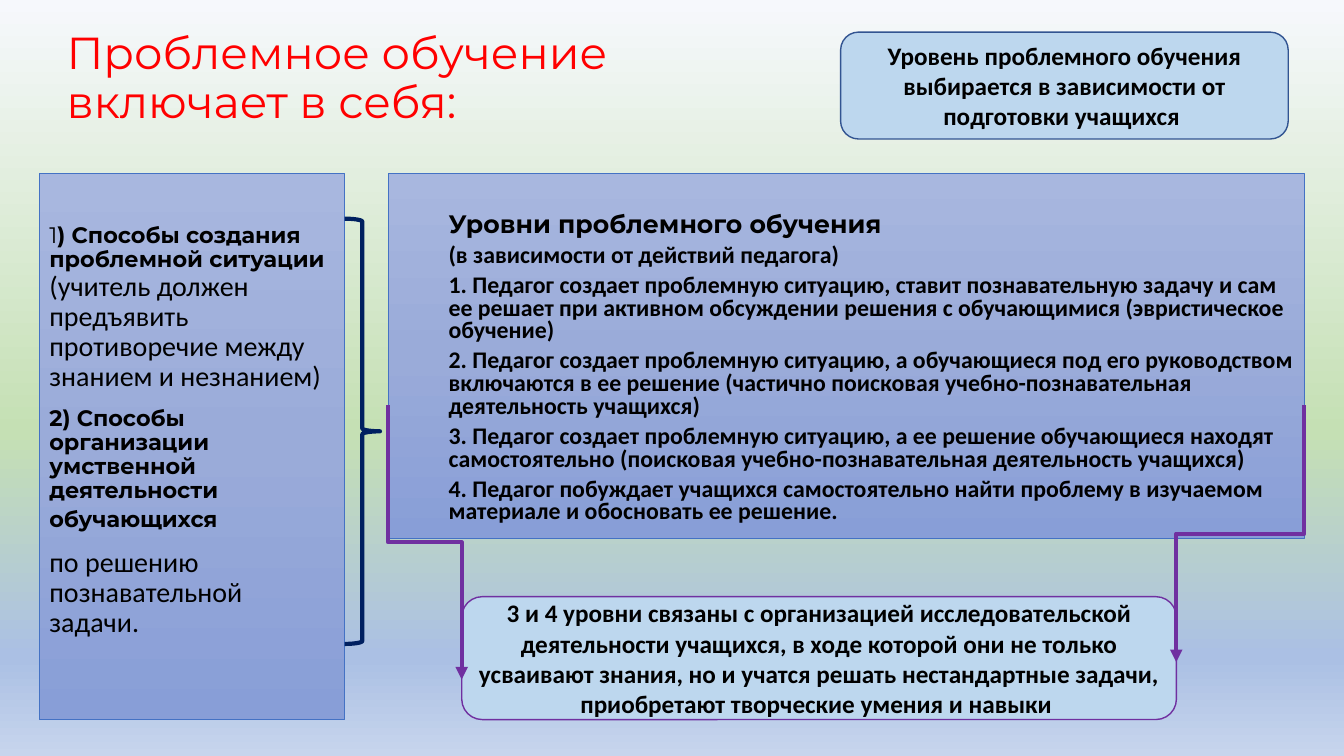
from lxml import etree
from pptx import Presentation
from pptx.dml.color import RGBColor
from pptx.enum import shapes, text
from pptx.oxml.ns import qn
from pptx.util import Pt

RED = RGBColor(0xFF, 0x00, 0x00)
BLACK = RGBColor(0x00, 0x00, 0x00)
BLUE = RGBColor(0x44, 0x72, 0xC4)
STEEL = RGBColor(0x32, 0x54, 0x91)
NAVY = RGBColor(0x00, 0x20, 0x60)
PURPLE = RGBColor(0x70, 0x30, 0xA0)
PALE = RGBColor(0xBD, 0xD7, 0xEE)
PANEL_STOPS = [(0, RGBColor(0xA8, 0xB7, 0xDF)), (50, RGBColor(0x9A, 0xAB, 0xD9)),
               (100, RGBColor(0x88, 0x9E, 0xD7))]
PAGE_STOPS = [(0, RGBColor(0xF6, 0xF8, 0xFC)), (57, RGBColor(0xC5, 0xE0, 0xB4)),
              (87, RGBColor(0xAB, 0xC0, 0xE4)), (100, RGBColor(0xC7, 0xD5, 0xED))]


def shade(fill, element, stops):
    fill.gradient()
    fill.gradient_angle = 270
    stop_list = element.find(".//" + qn("a:gsLst"))
    for stop in list(stop_list):
        stop_list.remove(stop)
    for position, color in stops:
        stop = etree.SubElement(stop_list, qn("a:gs"), pos=str(position * 1000))
        etree.SubElement(stop, qn("a:srgbClr"), val=str(color))


def place(shape, left, top, width, height):
    shape.left, shape.top = Pt(left), Pt(top)
    shape.width, shape.height = Pt(width), Pt(height)


deck = Presentation()
deck.slide_width, deck.slide_height = Pt(960), Pt(540)
page = deck.slides.add_slide(deck.slide_layouts[3])
shade(page.background.fill, page.element, PAGE_STOPS)

title, methods, levels = list(page.placeholders)[:3]
place(title, 40.3, -14.4, 884.2, 107.3)
title.text_frame.text = "Проблемное обучение\vвключает в себя:"
title.text_frame.auto_size = text.MSO_AUTO_SIZE.NONE
title.text_frame.vertical_anchor = text.MSO_ANCHOR.MIDDLE
title.text_frame.margin_top = Pt(38.6)
heading = title.text_frame.paragraphs[0]
heading.alignment = text.PP_ALIGN.LEFT
heading.line_spacing = 0.9
heading.font.name, heading.font.size = "Montserrat", Pt(32)
heading.font.color.rgb = RED

# span: wording, font, size, bold
METHODS = [
    [("1", "Montserrat", 16, False),
     (") Способы создания проблемной ситуации ", "Montserrat", 16, True),
     ("(учитель должен предъявить противоречие между знанием и незнанием)", "Calibri", 20, False)],
    [("2) Способы организации умственной деятельности обучающихся", "Montserrat", 16, True),
     (" ", "Calibri", 20, False)],
    [("по решению познавательной задачи.", "Calibri", 20, False)],
]
LEVELS = [[("Уровни проблемного обучения", "Montserrat", 18, True)]] + [
    [(line, "Calibri", 17, True)] for line in (
        "(в зависимости от действий педагога)",
        "1. Педагог создает проблемную ситуацию, ставит познавательную задачу и сам ее решает "
        "при активном обсуждении решения с обучающимися (эвристическое обучение)",
        "2. Педагог создает проблемную ситуацию, а обучающиеся под его руководством включаются "
        "в ее решение (частично поисковая учебно-познавательная деятельность учащихся)",
        "3. Педагог создает проблемную ситуацию, а ее решение обучающиеся находят самостоятельно "
        "(поисковая учебно-познавательная деятельность учащихся)",
        "4. Педагог побуждает учащихся самостоятельно найти проблему в изучаемом материале "
        "и обосновать ее решение.",
    )
]
for panel, left, width, height, inset, indent, spacing, gap, paragraphs in (
    (methods, 28.1, 218.2, 390.2, 36, 0, 0.9, 10, METHODS),
    (levels, 277.2, 654.5, 260.6, 29, 36, 0.8, 5, LEVELS),
):
    place(panel, left, 123.8, width, height)
    shade(panel.fill, panel.element, PANEL_STOPS)
    panel.line.color.rgb, panel.line.width = BLUE, Pt(0.5)
    frame = panel.text_frame
    frame.auto_size = text.MSO_AUTO_SIZE.NONE
    frame.margin_top = Pt(inset)
    for number, spans in enumerate(paragraphs):
        para = frame.add_paragraph() if number else frame.paragraphs[0]
        para.line_spacing = spacing
        para.space_before = Pt(gap if number else 0)
        properties = para._p.get_or_add_pPr()
        properties.set("marL", str(Pt(indent)))
        properties.set("indent", "0")
        etree.SubElement(properties, qn("a:buNone"))
        for wording, font, size, bold in spans:
            span = para.add_run()
            span.text = wording
            span.font.name, span.font.size, span.font.bold = font, Pt(size), bold
            span.font.color.rgb = BLACK

brace = page.shapes.add_shape(shapes.MSO_SHAPE.RIGHT_BRACE, Pt(246.2), Pt(156.2), Pt(25.2), Pt(303.8))
brace.shadow.inherit = False
brace.fill.background()
brace.line.color.rgb, brace.line.width = NAVY, Pt(3)

for left, top, width, height, outline, wording in (
    (600.5, 23, 319.7, 76.3, STEEL,
     "Уровень проблемного обучения выбирается в зависимости от подготовки учащихся "),
    (329.8, 426.2, 510.5, 87.8, PURPLE,
     "3 и 4 уровни связаны с организацией исследовательской деятельности учащихся, в ходе которой "
     "они не только усваивают знания, но и учатся решать нестандартные задачи, "
     "приобретают творческие умения и навыки "),
):
    box = page.shapes.add_shape(shapes.MSO_SHAPE.ROUNDED_RECTANGLE, Pt(left), Pt(top), Pt(width), Pt(height))
    box.shadow.inherit = False
    box.fill.solid()
    box.fill.fore_color.rgb = PALE
    box.line.color.rgb, box.line.width = outline, Pt(1)
    box.text_frame.word_wrap = True
    box.text_frame.vertical_anchor = text.MSO_ANCHOR.MIDDLE
    para = box.text_frame.paragraphs[0]
    para.text = wording
    para.alignment = text.PP_ALIGN.CENTER
    para.font.name, para.font.size, para.font.bold = "Calibri", Pt(18), True
    para.font.color.rgb = BLACK

for start_x, start_y, end_x, end_y in ((931.7, 289.4, 840.2, 473), (277.2, 289.4, 329.8, 485.3)):
    middle_x, middle_y = (start_x + end_x) / 2, (start_y + end_y) / 2
    reach = (end_y - start_y) / 2
    drop = abs(end_x - start_x) / 2
    side = 1 if end_x < start_x else -1
    arrow = page.shapes.add_connector(
        shapes.MSO_CONNECTOR.ELBOW, Pt(middle_x - side * reach), Pt(middle_y - drop),
        Pt(middle_x + side * reach), Pt(middle_y + drop))
    arrow.line.color.rgb, arrow.line.width = PURPLE, Pt(3)
    properties = arrow.element.spPr
    properties.find(qn("a:xfrm")).set("rot", str((90 if side == 1 else 270) * 60000))
    etree.SubElement(properties.find(qn("a:ln")), qn("a:tailEnd"), type="triangle")
    etree.SubElement(properties, qn("a:effectLst"))

deck_footers = [shape for shape in page.placeholders if not shape.text_frame.text]
for footer in deck_footers:
    footer.element.getparent().remove(footer.element)

deck.save("out.pptx")
